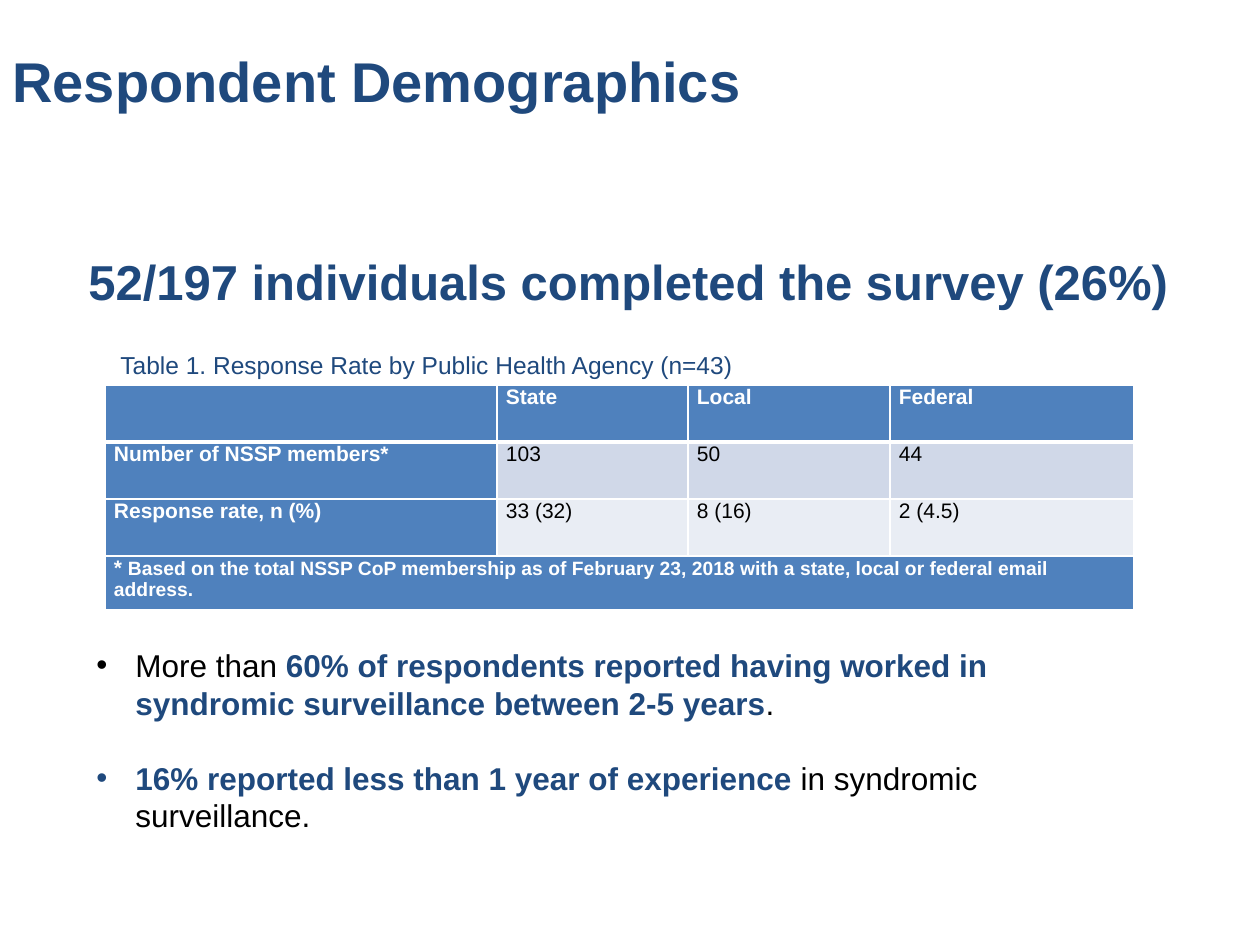
from dataclasses import dataclass

from lxml.etree import SubElement
from pptx import Presentation
from pptx.dml.color import RGBColor
from pptx.enum.text import MSO_ANCHOR
from pptx.oxml.ns import qn
from pptx.util import Pt

PX = 914400 / 126


@dataclass(frozen=True)
class Theme:
    font: str = "Arial"
    navy: str = "1F497D"
    blue: str = "4F81BD"
    white: str = "FFFFFF"
    black: str = "000000"
    bands: tuple = ("D0D8E8", "E9EDF4")
    title: int = 32
    headline: int = 28
    bullet: int = 18
    caption: int = 14
    cell: int = 12
    note: int = 11


THEME = Theme()

TITLE = "Respondent Demographics"
HEADLINE = "52/197 individuals completed the survey (26%)"
CAPTION = "Table 1. Response Rate by Public Health Agency (n=43)"
ROWS = [
    ["", "State", "Local", "Federal"],
    ["Number of NSSP members*", "103", "50", "44"],
    ["Response rate, n (%)", "33 (32)", "8 (16)", "2 (4.5)"],
]
NOTE_MARK = "* "
NOTE = ("Based on the total NSSP CoP membership as of February 23, 2018 "
        "with a state, local or federal email address.")
BULLETS = [
    [("More than ", False),
     ("60% of respondents reported having worked in syndromic surveillance "
      "between 2-5 years", True),
     (".", False)],
    [("16% reported less than 1 year of experience ", True),
     ("in syndromic surveillance.", False)],
]
COLUMN_WIDTHS = [392, 191, 202, 244]
ROW_HEIGHTS = [57, 57, 57, 54]


def px(value):
    return int(value * PX)


def add_run(paragraph, text, size, color, bold=False):
    run = paragraph.add_run()
    run.text = text
    run.font.name = THEME.font
    run.font.size = Pt(size)
    run.font.bold = bold
    run.font.color.rgb = RGBColor.from_string(color)


def add_box(slide, left, top, width, height, anchor=MSO_ANCHOR.TOP):
    box = slide.shapes.add_textbox(px(left), px(top), px(width), px(height))
    text_frame = box.text_frame
    text_frame.word_wrap = True
    text_frame.vertical_anchor = anchor
    return text_frame


def style_cell(cell, fill, header):
    cell.margin_left = cell.margin_right = px(9)
    cell.margin_top = cell.margin_bottom = 0
    properties = cell._tc.get_or_add_tcPr()
    for side in "LRTB":
        width = 3 if header and side == "B" else 1
        line = SubElement(properties, qn(f"a:ln{side}"), w=str(Pt(width)))
        solid = SubElement(line, qn("a:solidFill"))
        SubElement(solid, qn("a:srgbClr"), val=THEME.white)
    cell.fill.solid()
    cell.fill.fore_color.rgb = RGBColor.from_string(fill)


def add_response_table(slide):
    frame = slide.shapes.add_table(
        len(ROW_HEIGHTS), len(COLUMN_WIDTHS), px(105), px(385),
        px(sum(COLUMN_WIDTHS)), px(sum(ROW_HEIGHTS)))
    table = frame.table
    for column, width in zip(table.columns, COLUMN_WIDTHS):
        column.width = px(width)
    for row, height in zip(table.rows, ROW_HEIGHTS):
        row.height = px(height)

    last = len(ROWS)
    for r in range(len(ROW_HEIGHTS)):
        for c in range(len(COLUMN_WIDTHS)):
            cell = table.cell(r, c)
            heading = r in (0, last) or c == 0
            fill = THEME.blue if heading else THEME.bands[r - 1]
            style_cell(cell, fill, r == 0)
            if r < last and ROWS[r][c]:
                color = THEME.white if heading else THEME.black
                add_run(cell.text_frame.paragraphs[0], ROWS[r][c],
                        THEME.cell, color, heading)

    note_cell = table.cell(last, 0)
    note_cell.merge(table.cell(last, len(COLUMN_WIDTHS) - 1))
    paragraph = note_cell.text_frame.paragraphs[0]
    add_run(paragraph, NOTE_MARK, THEME.cell, THEME.white, True)
    add_run(paragraph, NOTE, THEME.note, THEME.white, True)


def add_bullets(slide):
    text_frame = add_box(slide, 84, 640, 1017, 242)
    for index, parts in enumerate(BULLETS):
        paragraph = text_frame.add_paragraph() if index else text_frame.paragraphs[0]
        if index:
            paragraph.space_before = Pt(21)
        properties = paragraph._p.get_or_add_pPr()
        properties.set("marL", str(px(39)))
        properties.set("indent", str(-px(39)))
        SubElement(properties, qn("a:buFont"), typeface=THEME.font)
        SubElement(properties, qn("a:buChar"), char="•")
        for text, strong in parts:
            color = THEME.navy if strong else THEME.black
            add_run(paragraph, text, THEME.bullet, color, strong)


def main():
    presentation = Presentation()
    presentation.slide_width, presentation.slide_height = px(1260), px(945)
    slide = presentation.slides.add_slide(presentation.slide_layouts[6])

    headline = add_box(slide, 76, 240, 1163, 82, MSO_ANCHOR.MIDDLE)
    add_run(headline.paragraphs[0], HEADLINE, THEME.headline, THEME.navy, True)
    title = add_box(slide, 0, 3, 987, 155, MSO_ANCHOR.MIDDLE)
    add_run(title.paragraphs[0], TITLE, THEME.title, THEME.navy, True)
    add_response_table(slide)
    add_bullets(slide)
    caption = add_box(slide, 108, 344, 872, 43)
    add_run(caption.paragraphs[0], CAPTION, THEME.caption, THEME.navy)

    presentation.save("out.pptx")


if __name__ == "__main__":
    main()
